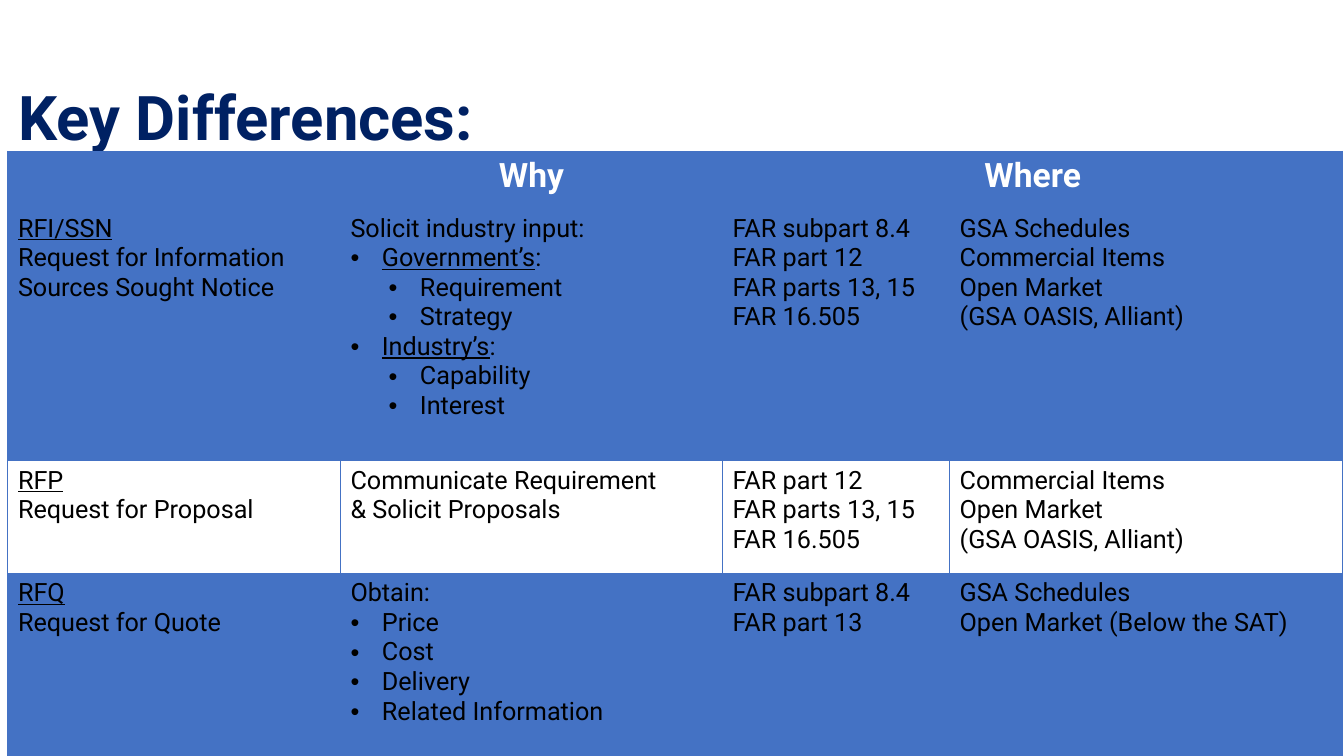
import pptx
import pptx.util
import pptx.dml.color
import pptx.enum.text
import pptx.oxml.ns
from dataclasses import dataclass
from lxml import etree
from pptx.util import Cm

BLUE = "4472C4"
CENTER = pptx.enum.text.PP_ALIGN.CENTER


@dataclass
class Line:
    text: str = ""
    underlined: str = ""
    level: int = 0


def color(hex_value):
    return pptx.dml.color.RGBColor.from_string(hex_value)


def add_xml(parent, tag, **attributes):
    return etree.SubElement(parent, pptx.oxml.ns.qn(tag), attributes)


class Deck:
    font = "Roboto"
    indents = {1: 0.79, 2: 1.75}

    def __init__(self):
        self.presentation = pptx.Presentation()
        self.presentation.slide_width = Cm(33.87)
        self.presentation.slide_height = Cm(19.05)
        self.slide = self.presentation.slides.add_slide(self.presentation.slide_layouts[6])

    def run(self, paragraph, text, size, ink, bold=False, underline=False):
        run = paragraph.add_run()
        run.text = text
        run.font.name = self.font
        run.font.size = pptx.util.Pt(size)
        run.font.bold = bold
        run.font.underline = underline
        run.font.color.rgb = color(ink)

    def title(self, text, left, top, width, height):
        frame = self.slide.shapes.add_textbox(Cm(left), Cm(top), Cm(width), Cm(height)).text_frame
        frame.word_wrap = True
        frame.vertical_anchor = pptx.enum.text.MSO_ANCHOR.BOTTOM
        frame.margin_left = frame.margin_right = frame.margin_top = frame.margin_bottom = Cm(0.25)
        paragraph = frame.paragraphs[0]
        paragraph.alignment = CENTER
        self.run(paragraph, text, 44, "002163", bold=True)

    def table(self, left, top, widths, heights):
        table = self.slide.shapes.add_table(
            len(heights), len(widths), Cm(left), Cm(top), Cm(sum(widths)), Cm(sum(heights))
        ).table
        for column, width in zip(table.columns, widths):
            column.width = Cm(width)
        for row, height in zip(table.rows, heights):
            row.height = Cm(height)
        table.horz_banding = False
        for cell in table.iter_cells():
            self.borders(cell)
        return table

    def borders(self, cell):
        properties = cell._tc.get_or_add_tcPr()
        for side in ("a:lnL", "a:lnR", "a:lnT", "a:lnB"):
            line = add_xml(properties, side, w=str(pptx.util.Pt(0.75)))
            add_xml(add_xml(line, "a:solidFill"), "a:srgbClr", val=BLUE)

    def fill(self, cell, opacity):
        if not opacity:
            cell.fill.background()
            return
        cell.fill.solid()
        cell.fill.fore_color.rgb = color(BLUE)
        if opacity < 100:
            tint = cell._tc.tcPr.find(".//" + pptx.oxml.ns.qn("a:srgbClr"))
            add_xml(tint, "a:alpha", val=str(opacity * 1000))

    def heading(self, cell, text):
        self.fill(cell, 100)
        if text:
            paragraph = cell.text_frame.paragraphs[0]
            paragraph.alignment = CENTER
            self.run(paragraph, text, 24, "FFFFFF", bold=True)

    def bullet(self, paragraph, level):
        properties = paragraph._p.get_or_add_pPr()
        properties.set("marL", str(Cm(self.indents[level])))
        properties.set("indent", str(-Cm(self.indents[1])))
        add_xml(add_xml(properties, "a:buClr"), "a:srgbClr", val="000000")
        add_xml(properties, "a:buFont", typeface="Arial")
        add_xml(properties, "a:buChar", char="•")

    def body(self, cell, lines, opacity):
        self.fill(cell, opacity)
        frame = cell.text_frame
        for index, line in enumerate(lines):
            paragraph = frame.add_paragraph() if index else frame.paragraphs[0]
            if line.level:
                self.bullet(paragraph, line.level)
            if line.underlined:
                self.run(paragraph, line.underlined, 18, "000000", underline=True)
            if line.text:
                self.run(paragraph, line.text, 18, "000000")


def plain(*texts):
    return [Line(text) for text in texts]


def bullets(level, *texts):
    return [Line(text, level=level) for text in texts]


HEADINGS = ["", "Why", "Where", ""]
DOCUMENTS = [
    [
        [Line(underlined="RFI/SSN"), *plain("Request for Information", "Sources Sought Notice")],
        [
            Line("Solicit industry input:"),
            Line(":", "Government’s", 1),
            *bullets(2, "Requirement", "Strategy"),
            Line(":", "Industry’s", 1),
            *bullets(2, "Capability", "Interest"),
        ],
        plain("FAR subpart 8.4", "FAR part 12", "FAR parts 13, 15", "FAR 16.505"),
        plain("GSA Schedules", "Commercial Items", "Open Market", "(GSA OASIS, Alliant)"),
    ],
    [
        [Line(underlined="RFP"), Line("Request for Proposal")],
        plain("Communicate Requirement", "& Solicit Proposals"),
        plain("FAR part 12", "FAR parts 13, 15", "FAR 16.505"),
        plain("Commercial Items", "Open Market", "(GSA OASIS, Alliant)"),
    ],
    [
        [Line(underlined="RFQ"), Line("Request for Quote")],
        [Line("Obtain:"), *bullets(1, "Price", "Cost", "Delivery", "Related Information")],
        plain("FAR subpart 8.4", "FAR part 13"),
        plain("GSA Schedules", "Open Market (Below the SAT)"),
    ],
]


def main():
    deck = Deck()
    deck.title("Key Differences:", -5.1, 1.7, 22.6, 2.4)
    differences = deck.table(0.2, 3.81, [8.38, 9.63, 5.72, 9.91], [1.45, 6.35, 2.84, 4.62])
    for column, heading in enumerate(HEADINGS):
        deck.heading(differences.cell(0, column), heading)
    differences.cell(0, 2).merge(differences.cell(0, 3))
    for row, document in enumerate(DOCUMENTS, start=1):
        for column, lines in enumerate(document):
            deck.body(differences.cell(row, column), lines, 40 if row % 2 else 0)
    deck.presentation.save("out.pptx")


if __name__ == "__main__":
    main()
